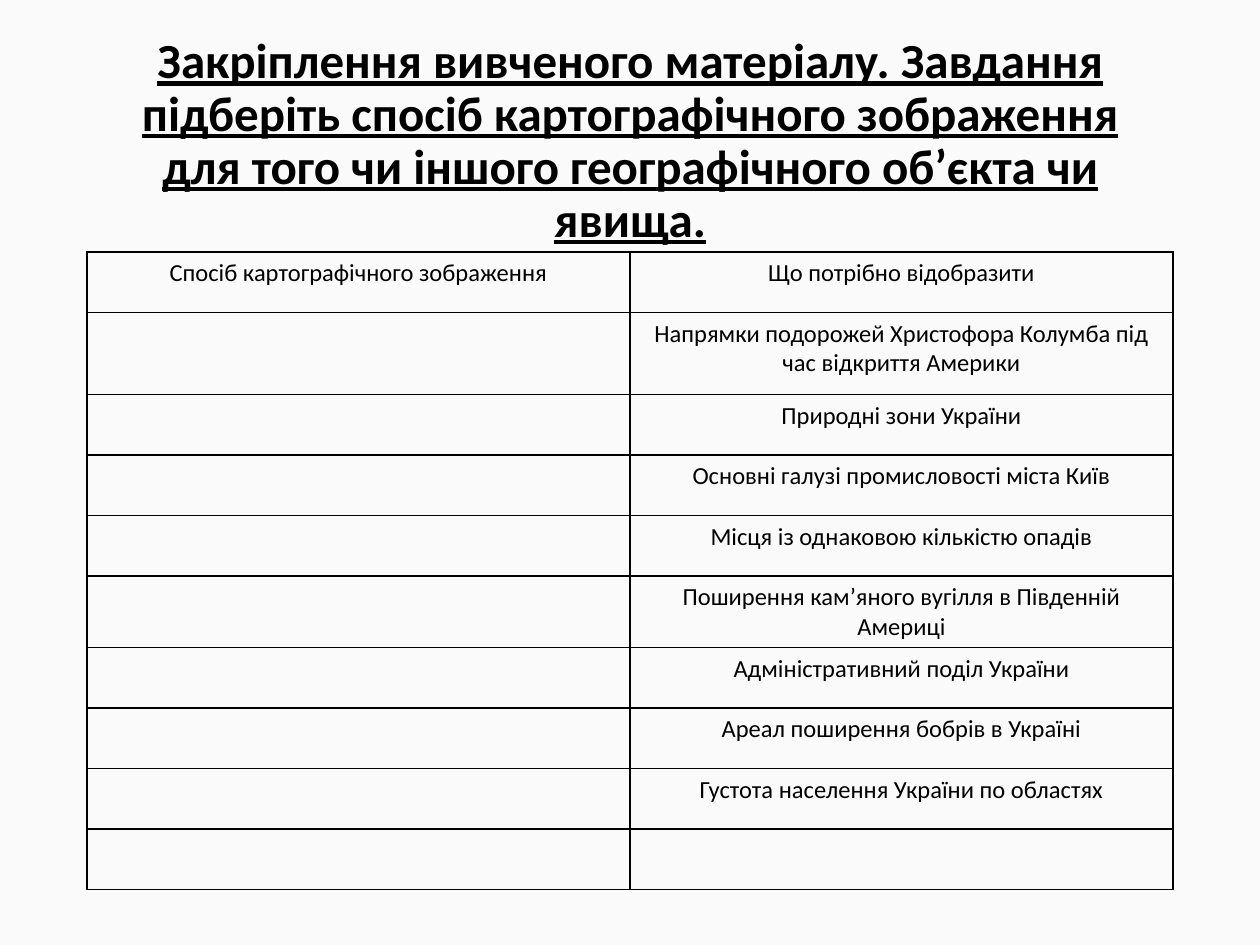
"""Build a slide with a map-symbol exercise: a heading over a two-column table."""
import dataclasses
import typing

import lxml.etree
import pptx
import pptx.dml.color
import pptx.enum.text
import pptx.oxml.ns
import pptx.util

WIDTH, HEIGHT = 10, 7.5
MARGIN = 0.069 * WIDTH
CONTENT_WIDTH = WIDTH - 2 * MARGIN
ROW_HEIGHT = 0.064 * HEIGHT
INK, PAPER = "000000", "FAFAFA"
HEADING = (
    "Закріплення вивченого матеріалу. Завдання підберіть спосіб картографічного "
    "зображення для того чи іншого географічного об’єкта чи явища."
)
HEADING_FORMAT = {"name": "Calibri", "size": pptx.util.Pt(28), "bold": True, "underline": True}
CELL_FORMAT = {"name": "Calibri", "size": pptx.util.Pt(14), "bold": False}


@dataclasses.dataclass(frozen=True)
class ExerciseRow:
    """One table row: the mapping method, what to show, and its height in rows."""

    subject: str = ""
    method: str = ""
    height: float = 1


EXERCISE = [
    ExerciseRow("Що потрібно відобразити", "Спосіб картографічного зображення"),
    ExerciseRow("Напрямки подорожей Христофора Колумба під час відкриття Америки", height=1.36),
    ExerciseRow("Природні зони України"),
    ExerciseRow("Основні галузі промисловості міста Київ"),
    ExerciseRow("Місця із однаковою кількістю опадів"),
    ExerciseRow("Поширення кам’яного вугілля в Південній Америці"),
    ExerciseRow("Адміністративний поділ України"),
    ExerciseRow("Ареал поширення бобрів в Україні"),
    ExerciseRow("Густота населення України по областях"),
    ExerciseRow(),
]


def colour(value: str) -> pptx.dml.color.RGBColor:
    """Turn a hex string into a colour."""
    return pptx.dml.color.RGBColor.from_string(value)


def write(frame: typing.Any, text: str, formats: dict[str, typing.Any]) -> None:
    """Write one centred paragraph with the given font values."""
    paragraph = frame.paragraphs[0]
    paragraph.alignment = pptx.enum.text.PP_ALIGN.CENTER
    if not text:
        return
    run = paragraph.add_run()
    run.text = text
    for attribute, value in formats.items():
        setattr(run.font, attribute, value)
    run.font.color.rgb = colour(INK)


def draw_borders(cell: typing.Any) -> None:
    """Rule all four sides of a cell with a thin line."""
    properties = cell._tc.get_or_add_tcPr()
    qn = pptx.oxml.ns.qn
    for side in ("a:lnL", "a:lnR", "a:lnT", "a:lnB"):
        line = lxml.etree.SubElement(properties, qn(side), w=str(pptx.util.Pt(1)))
        fill = lxml.etree.SubElement(line, qn("a:solidFill"))
        lxml.etree.SubElement(fill, qn("a:srgbClr"), val=INK)


def draw_heading(slide: typing.Any) -> None:
    """Place the underlined heading above the table."""
    box = (MARGIN, 0.4, CONTENT_WIDTH, 1.45)
    frame = slide.shapes.add_textbox(*map(pptx.util.Inches, box)).text_frame
    frame.word_wrap = True
    frame.vertical_anchor = pptx.enum.text.MSO_ANCHOR.MIDDLE
    write(frame, HEADING, HEADING_FORMAT)
    frame.paragraphs[0].line_spacing = 0.9


def draw_exercise(slide: typing.Any, rows: list[ExerciseRow]) -> None:
    """Draw the exercise table with two equal columns."""
    total = ROW_HEIGHT * sum(row.height for row in rows)
    box = (MARGIN, 2, CONTENT_WIDTH, total)
    table = slide.shapes.add_table(len(rows), 2, *map(pptx.util.Inches, box)).table
    table.first_row = table.horz_banding = False
    for index, row in enumerate(rows):
        table.rows[index].height = pptx.util.Inches(ROW_HEIGHT * row.height)
        for column, text in enumerate((row.method, row.subject)):
            cell = table.cell(index, column)
            draw_borders(cell)
            cell.fill.background()
            write(cell.text_frame, text, CELL_FORMAT)


def main() -> None:
    """Build and save the slide."""
    deck = pptx.Presentation()
    deck.slide_width = pptx.util.Inches(WIDTH)
    deck.slide_height = pptx.util.Inches(HEIGHT)
    slide = deck.slides.add_slide(deck.slide_layouts[6])
    slide.background.fill.solid()
    slide.background.fill.fore_color.rgb = colour(PAPER)
    draw_heading(slide)
    draw_exercise(slide, EXERCISE)
    deck.save("out.pptx")


if __name__ == "__main__":
    main()
